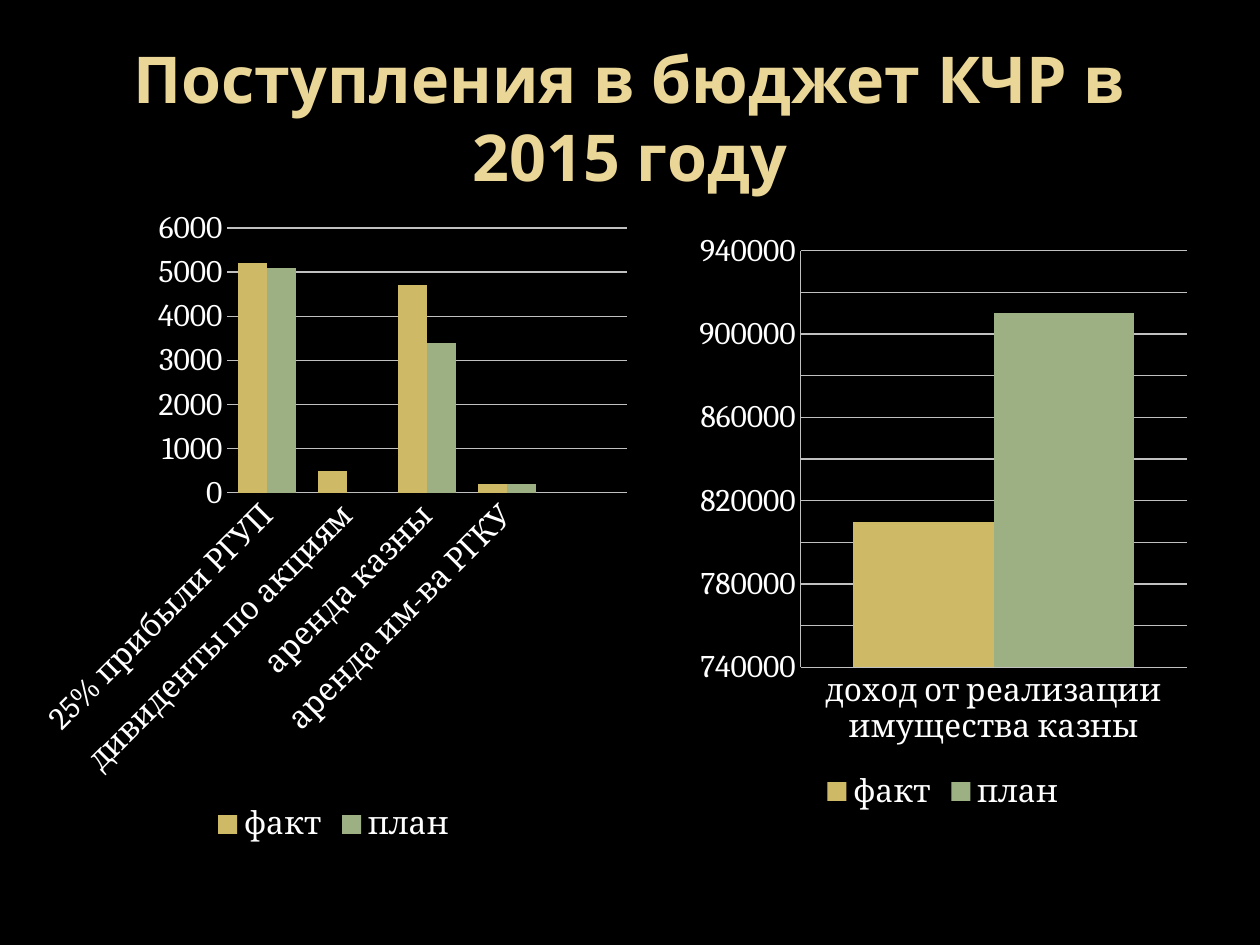
from dataclasses import dataclass
from typing import Optional

from pptx import Presentation
from pptx.chart.data import CategoryChartData
from pptx.dml.color import RGBColor
from pptx.enum.chart import XL_CHART_TYPE, XL_LEGEND_POSITION, XL_TICK_MARK
from pptx.enum.text import MSO_ANCHOR, PP_ALIGN
from pptx.oxml.ns import qn
from pptx.util import Pt

COLOURS = {
    "background": "000000",
    "title": "EAD696",
    "text": "FFFFFF",
    "line": "C0C0C0",
    "fact": "CEB966",
    "plan": "9CB084",
}
TITLE_FORMAT = {"name": "Open Sans", "size": Pt(36.9), "bold": True}
CHART_FORMAT = {"name": "Cambria", "size": Pt(18), "bold": False}


@dataclass
class Frame:
    left: float
    top: float
    width: float
    height: float

    def lengths(self) -> list:
        return [Pt(v) for v in (self.left, self.top, self.width, self.height)]


@dataclass
class BudgetChart:
    frame: Frame
    categories: list
    fact: list
    plan: list
    minimum: float
    maximum: float
    step: float
    axis_line: bool
    label_angle: Optional[int] = None


CHARTS = [
    BudgetChart(
        Frame(16.5, 112.3, 348.5, 373),
        ["25% прибыли РГУП", "дивиденты по акциям", "аренда казны",
         "аренда им-ва РГКУ", ""],
        [5200, 500, 4700, 200, None], [5100, 0, 3400, 200, None],
        0, 6000, 1000, axis_line=False, label_angle=-45),
    BudgetChart(
        Frame(393.8, 126, 290.2, 340.5),
        ["доход от реализации имущества казны"],
        [810000], [910000],
        740000, 940000, 20000, axis_line=True),
]


def colour(name: str) -> RGBColor:
    return RGBColor.from_string(COLOURS[name])


def set_font(font, values: dict, colour_name: str) -> None:
    for key, value in values.items():
        setattr(font, key, value)
    font.color.rgb = colour(colour_name)


def set_line(line) -> None:
    line.color.rgb = colour("line")
    line.width = Pt(0.75)


def add_title(page, text: str, frame: Frame) -> None:
    box = page.shapes.add_textbox(*frame.lengths())
    box.text_frame.word_wrap = True
    box.text_frame.vertical_anchor = MSO_ANCHOR.MIDDLE
    para = box.text_frame.paragraphs[0]
    para.alignment = PP_ALIGN.CENTER
    span = para.add_run()
    span.text = text
    set_font(span.font, TITLE_FORMAT, "title")


def add_budget_chart(page, item: BudgetChart) -> None:
    data = CategoryChartData()
    data.categories = item.categories
    data.add_series("факт", item.fact)
    data.add_series("план", item.plan)
    chart = page.shapes.add_chart(
        XL_CHART_TYPE.COLUMN_CLUSTERED, *item.frame.lengths(), data).chart
    chart.has_title = False
    set_font(chart.font, CHART_FORMAT, "text")

    # Columns
    columns = chart.plots[0]
    columns.gap_width = 75
    columns.overlap = 0
    columns.vary_by_categories = False
    for series, name in zip(columns.series, ("fact", "plan")):
        series.invert_if_negative = False
        series.format.fill.solid()
        series.format.fill.fore_color.rgb = colour(name)

    # Axes
    for axis in (chart.category_axis, chart.value_axis):
        axis.major_tick_mark = XL_TICK_MARK.NONE
        axis.minor_tick_mark = XL_TICK_MARK.NONE
        set_font(axis.tick_labels.font, CHART_FORMAT, "text")
        set_line(axis.format.line)
    scale = {"minimum_scale": item.minimum, "maximum_scale": item.maximum,
             "major_unit": item.step, "has_major_gridlines": True}
    for key, value in scale.items():
        setattr(chart.value_axis, key, value)
    set_line(chart.value_axis.major_gridlines.format.line)
    if not item.axis_line:
        chart.value_axis.format.line.fill.background()
    if item.label_angle is not None:
        body = chart.category_axis._element.find(
            f"{qn('c:txPr')}/{qn('a:bodyPr')}")
        body.set("rot", str(item.label_angle * 60000))

    # Legend
    chart.has_legend = True
    chart.legend.position = XL_LEGEND_POSITION.BOTTOM
    chart.legend.include_in_layout = False
    set_font(chart.legend.font, CHART_FORMAT, "text")


def main() -> None:
    deck = Presentation()
    deck.slide_width, deck.slide_height = Pt(720), Pt(540)
    page = deck.slides.add_slide(deck.slide_layouts[6])
    page.background.fill.solid()
    page.background.fill.fore_color.rgb = colour("background")

    add_title(page, "Поступления в бюджет КЧР в 2015 году",
              Frame(36, 21.6, 648, 90))
    for item in CHARTS:
        add_budget_chart(page, item)
    deck.save("out.pptx")


if __name__ == "__main__":
    main()
